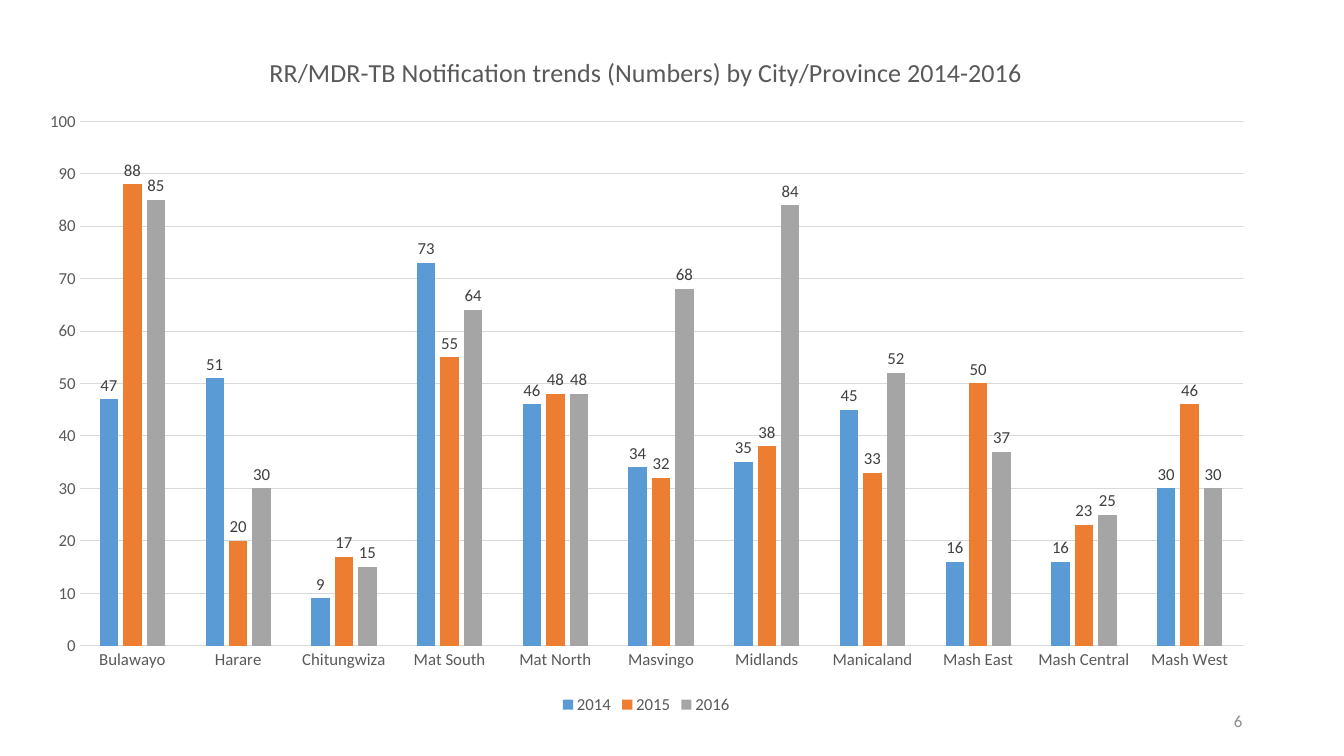
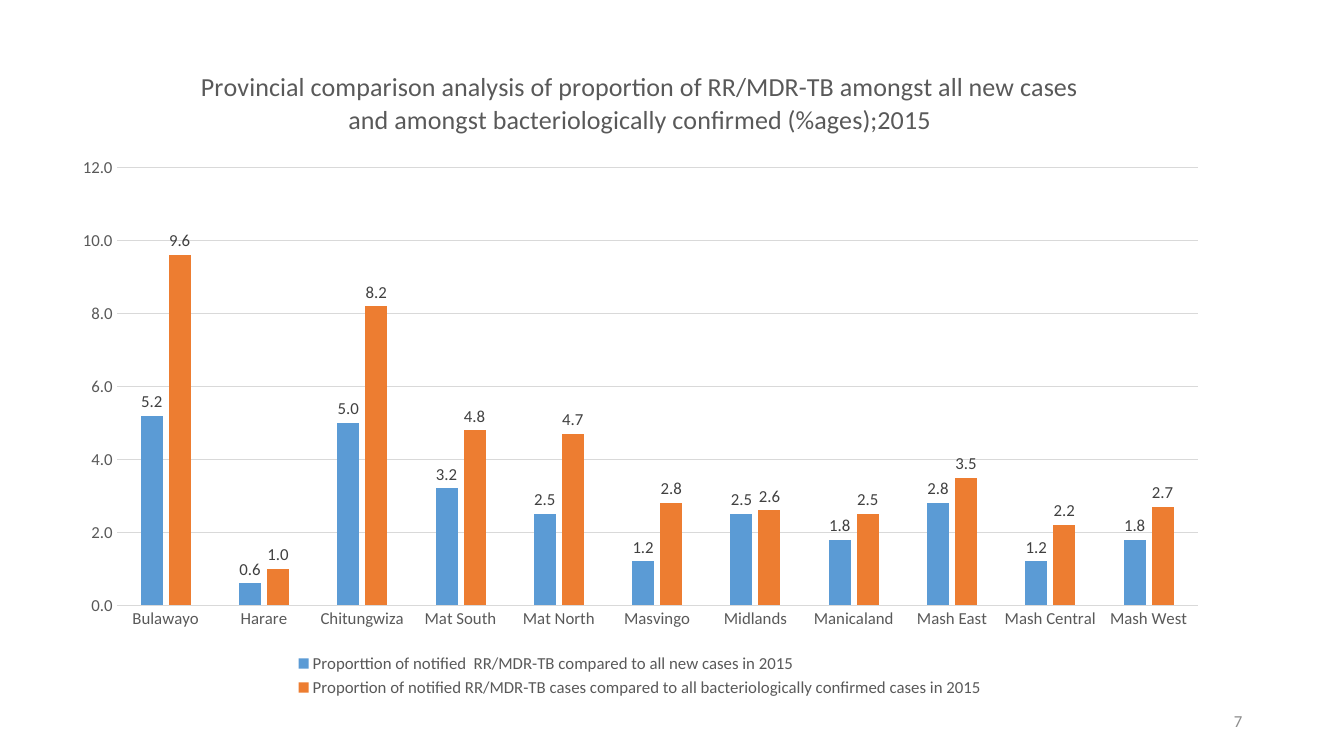
from dataclasses import dataclass

from pptx import Presentation
from pptx.chart.axis import CategoryAxis, ValueAxis
from pptx.chart.chart import Chart
from pptx.chart.data import CategoryChartData
from pptx.chart.series import BarSeries
from pptx.dml.color import RGBColor
from pptx.enum.chart import (
    XL_CHART_TYPE, XL_LABEL_POSITION, XL_LEGEND_POSITION, XL_TICK_MARK,
)
from pptx.enum.text import MSO_ANCHOR, PP_ALIGN
from pptx.slide import Slide
from pptx.text.text import Font
from pptx.util import Inches, Pt

BLUE = RGBColor(0x5B, 0x9B, 0xD5)
ORANGE = RGBColor(0xED, 0x7D, 0x31)
GREY = RGBColor(0xA5, 0xA5, 0xA5)
INK = RGBColor(0x59, 0x59, 0x59)
DARK = RGBColor(0x40, 0x40, 0x40)
PALE = RGBColor(0xD9, 0xD9, 0xD9)
FOOT = RGBColor(0x8C, 0x8C, 0x8C)
FILLS = (BLUE, ORANGE, GREY)

BODY = {"name": "Calibri", "size": Pt(12), "bold": False}
HEAD = BODY | {"size": Pt(18.6)}

AREAS = (
    "Bulawayo", "Harare", "Chitungwiza", "Mat South", "Mat North", "Masvingo",
    "Midlands", "Manicaland", "Mash East", "Mash Central", "Mash West",
)


@dataclass(frozen=True)
class Page:
    number: int
    box: tuple[float, float, float, float]
    title: str
    top: float
    step: float
    form: str
    series: dict[str, tuple[float, ...]]


PAGES = (
    Page(
        6, (0.25, 0.3, 12.32, 6.83),
        "RR/MDR-TB Notification trends (Numbers) by City/Province 2014-2016",
        100, 10, "General",
        {
            "2014": (47, 51, 9, 73, 46, 34, 35, 45, 16, 16, 30),
            "2015": (88, 20, 17, 55, 48, 32, 38, 33, 50, 23, 46),
            "2016": (85, 30, 15, 64, 48, 68, 84, 52, 37, 25, 30),
        },
    ),
    Page(
        7, (0.59, 0.45, 11.52, 6.51),
        "Provincial comparison analysis of proportion of RR/MDR-TB amongst all "
        "new cases and amongst bacteriologically confirmed (%ages);2015",
        12, 2, "0.0",
        {
            "Proporttion of notified  RR/MDR-TB compared to all new cases in 2015":
                (5.2, 0.6, 5, 3.2, 2.5, 1.2, 2.5, 1.8, 2.8, 1.2, 1.8),
            "Proportion of notified RR/MDR-TB cases compared to all "
            "bacteriologically confirmed cases in 2015":
                (9.6, 1, 8.2, 4.8, 4.7, 2.8, 2.6, 2.5, 3.5, 2.2, 2.7),
        },
    ),
)


def set_font(font: Font, color: RGBColor, style: dict = BODY) -> None:
    for key, value in style.items():
        setattr(font, key, value)
    font.color.rgb = color


def set_axis(axis: CategoryAxis | ValueAxis) -> None:
    axis.major_tick_mark = axis.minor_tick_mark = XL_TICK_MARK.NONE
    set_font(axis.tick_labels.font, INK)


def set_scale(axis: ValueAxis, page: Page) -> None:
    set_axis(axis)
    scale = {
        "minimum_scale": 0, "maximum_scale": page.top, "major_unit": page.step,
        "has_major_gridlines": True,
    }
    for key, value in scale.items():
        setattr(axis, key, value)
    axis.format.line.fill.background()
    grid = axis.major_gridlines.format.line
    grid.color.rgb, grid.width = PALE, Pt(0.75)
    axis.tick_labels.number_format = page.form
    axis.tick_labels.number_format_is_linked = False


def set_bars(series: BarSeries, fill: RGBColor, form: str) -> None:
    series.format.fill.solid()
    series.format.fill.fore_color.rgb = fill
    series.invert_if_negative = False
    labels = series.data_labels
    style = {
        "show_value": True, "position": XL_LABEL_POSITION.OUTSIDE_END,
        "number_format": form, "number_format_is_linked": False,
    }
    for key, value in style.items():
        setattr(labels, key, value)
    set_font(labels.font, DARK)


def set_title(chart: Chart, text: str) -> None:
    chart.has_title = True
    frame = chart.chart_title.text_frame
    run = frame.paragraphs[0].add_run()
    run.text = text
    set_font(run.font, INK, HEAD)


def set_legend(chart: Chart) -> None:
    chart.has_legend = True
    chart.legend.position = XL_LEGEND_POSITION.BOTTOM
    chart.legend.include_in_layout = False
    set_font(chart.legend.font, INK)


def add_bars(slide: Slide, page: Page) -> None:
    data = CategoryChartData(number_format=page.form)
    data.categories = AREAS
    for name, values in page.series.items():
        data.add_series(name, values)
    chart = slide.shapes.add_chart(
        XL_CHART_TYPE.COLUMN_CLUSTERED, *map(Inches, page.box), data
    ).chart
    set_title(chart, page.title)
    set_legend(chart)
    set_axis(chart.category_axis)
    base = chart.category_axis.format.line
    base.color.rgb, base.width = PALE, Pt(0.75)
    set_scale(chart.value_axis, page)
    plot = chart.plots[0]
    plot.gap_width, plot.overlap = 219, -27
    plot.vary_by_categories = False
    for series, fill in zip(plot.series, FILLS):
        set_bars(series, fill, page.form)


def add_number(slide: Slide, number: int) -> None:
    box = slide.shapes.add_textbox(*map(Inches, (9.42, 6.95, 3, 0.4)))
    frame = box.text_frame
    frame.word_wrap = True
    frame.vertical_anchor = MSO_ANCHOR.MIDDLE
    line = frame.paragraphs[0]
    line.alignment = PP_ALIGN.RIGHT
    run = line.add_run()
    run.text = str(number)
    set_font(run.font, FOOT)


def main() -> None:
    deck = Presentation()
    deck.slide_width, deck.slide_height = Inches(13.33), Inches(7.5)
    blank = deck.slide_layouts[6]
    for page in PAGES:
        slide = deck.slides.add_slide(blank)
        add_bars(slide, page)
        add_number(slide, page.number)
    deck.save("out.pptx")


if __name__ == "__main__":
    main()
